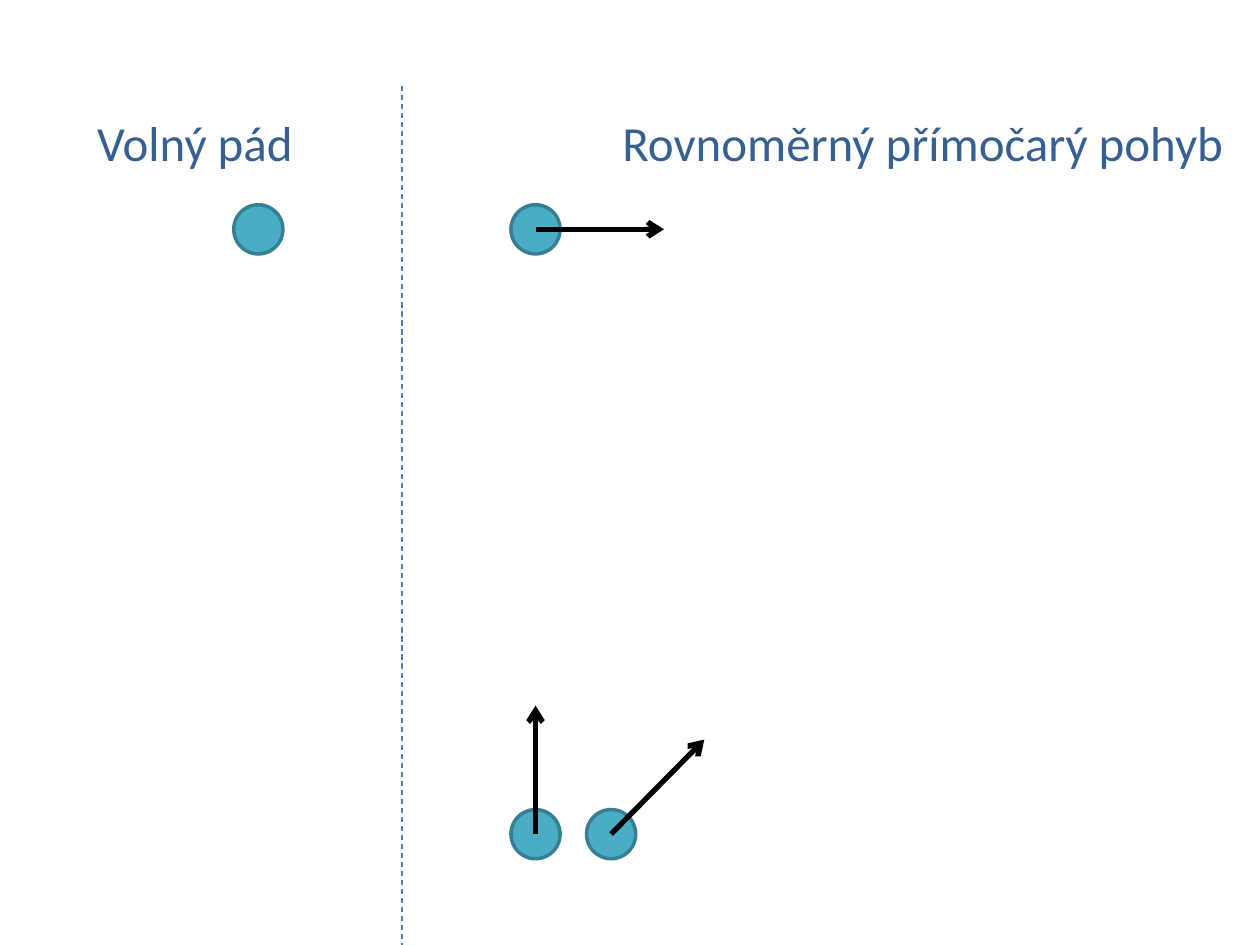
from dataclasses import dataclass
from lxml.etree import SubElement as Sub
from pptx import Presentation
from pptx.dml.color import RGBColor as Rgb
from pptx.enum.dml import MSO_LINE as Dash
from pptx.enum.shapes import MSO_CONNECTOR as Conn, MSO_SHAPE as Kind
from pptx.enum.text import MSO_ANCHOR as Anchor, MSO_AUTO_SIZE as Fit, PP_ALIGN as Align
from pptx.oxml.ns import qn
from pptx.util import Inches, Pt

WIDE, HIGH = 10, 7.5


@dataclass(frozen=True)
class Theme:
    font: str = "Calibri"
    size: float = 28
    head: Rgb = Rgb(0x37, 0x60, 0x92)
    ball: Rgb = Rgb(0x4B, 0xAC, 0xC6)
    rim: Rgb = Rgb(0x37, 0x7F, 0x92)
    arrow: Rgb = Rgb(0, 0, 0)
    rule: Rgb = Rgb(0x4B, 0x7E, 0xBC)
    rim_pt: float = 2
    arrow_pt: float = 3
    rule_pt: float = 0.75


@dataclass(frozen=True)
class Head:
    slot: int
    text: str
    left: float
    width: float


@dataclass(frozen=True)
class Ball:
    """Centre and velocity, in inches."""
    x: float
    y: float
    dx: float = 0
    dy: float = 0


THEME = Theme()
BALL = 0.39
TOP, LOW = 1.82, 6.62   # rows of balls
FALL, THROW = 2.05, 4.25  # columns of balls
SPEED = 1.02

HEADS = [
    Head(1, "Volný pád", 0.67, 4.33),
    Head(3, "Rovnoměrný přímočarý pohyb", 4.84, 5.04),
]
BALLS = [
    Ball(FALL, TOP),
    Ball(THROW, TOP, dx=SPEED),
    Ball(THROW, LOW, dy=-SPEED),
    Ball(THROW + 0.6, LOW, dx=0.74, dy=-0.75),
]


def add_head(slide, head: Head) -> None:
    box = next(p for p in slide.placeholders
               if p.placeholder_format.idx == head.slot)
    box.left, box.top = Inches(head.left), Inches(0.84)
    box.width, box.height = Inches(head.width), Inches(0.79)
    frame = box.text_frame
    frame.word_wrap = True
    frame.auto_size = Fit.NONE
    frame.vertical_anchor = Anchor.TOP
    para = frame.paragraphs[0]
    para.alignment = Align.LEFT
    para.space_before = Pt(0)
    run = para.add_run()
    run.text = head.text
    run.font.name, run.font.size = THEME.font, Pt(THEME.size)
    run.font.bold = False
    run.font.color.rgb = THEME.head


def add_ball(slide, ball: Ball) -> None:
    disc = slide.shapes.add_shape(
        Kind.OVAL, Inches(ball.x - BALL / 2), Inches(ball.y - BALL / 2),
        Inches(BALL), Inches(BALL))
    disc.shadow.inherit = False
    disc.fill.solid()
    disc.fill.fore_color.rgb = THEME.ball
    disc.line.color.rgb = THEME.rim
    disc.line.width = Pt(THEME.rim_pt)


def add_line(slide, x: float, y: float, dx: float, dy: float,
             color: Rgb, width: float):
    line = slide.shapes.add_connector(
        Conn.STRAIGHT, Inches(x), Inches(y), Inches(x + dx), Inches(y + dy))
    line.line.color.rgb = color
    line.line.width = Pt(width)
    Sub(line._element.spPr, qn("a:effectLst"))
    return line


def add_arrow(slide, ball: Ball) -> None:
    line = add_line(slide, ball.x, ball.y, ball.dx, ball.dy,
                    THEME.arrow, THEME.arrow_pt)
    Sub(line.line._get_or_add_ln(), qn("a:tailEnd"), type="arrow")


def main() -> None:
    deck = Presentation()
    deck.slide_width, deck.slide_height = Inches(WIDE), Inches(HIGH)
    slide = deck.slides.add_slide(deck.slide_layouts[4])

    # Headings
    for head in HEADS:
        add_head(slide, head)
    used = {head.slot for head in HEADS}
    for spare in list(slide.placeholders):
        if spare.placeholder_format.idx not in used:
            spare.element.getparent().remove(spare.element)

    # Balls, then their velocities on top
    for ball in BALLS:
        add_ball(slide, ball)
    for ball in BALLS:
        if ball.dx or ball.dy:
            add_arrow(slide, ball)

    # Divider, down to the foot of the slide
    start = 0.68
    rule = add_line(slide, 3.19, start, 0, HIGH - start,
                    THEME.rule, THEME.rule_pt)
    rule.line.dash_style = Dash.DASH

    deck.save("out.pptx")


if __name__ == "__main__":
    main()
